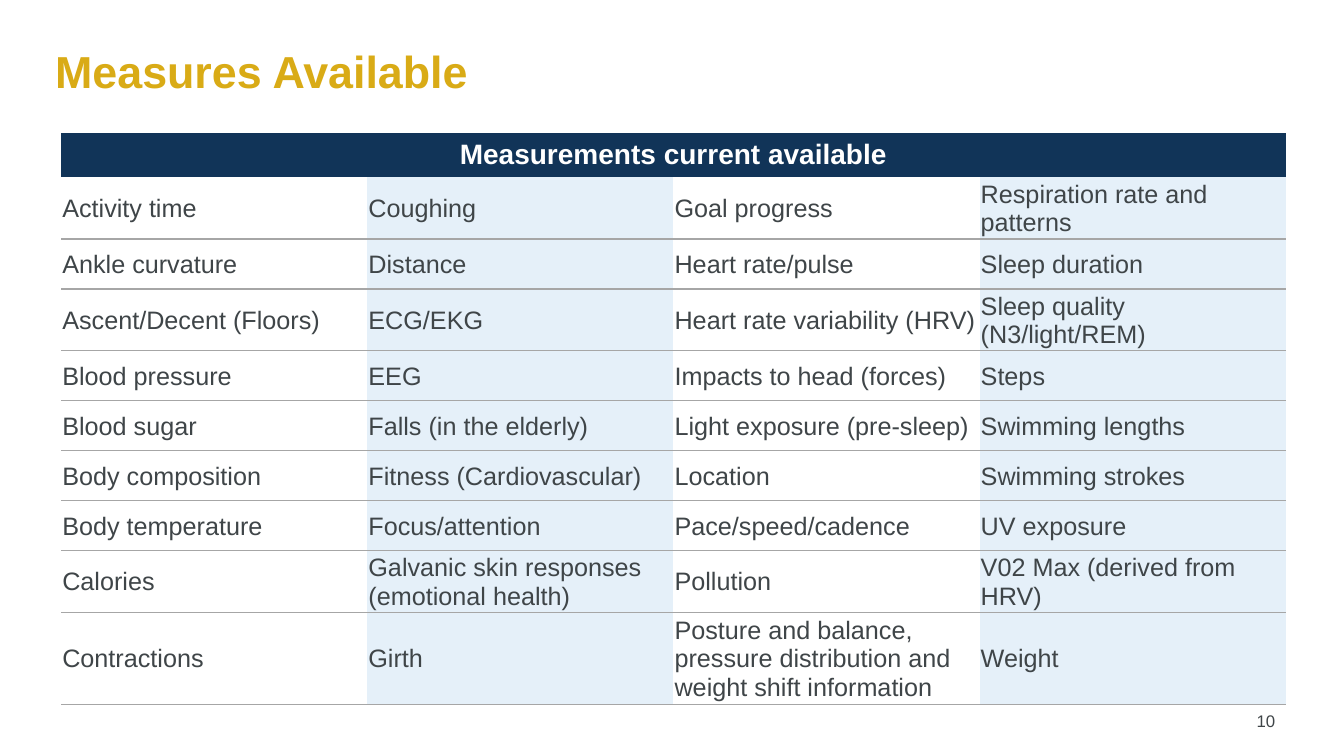
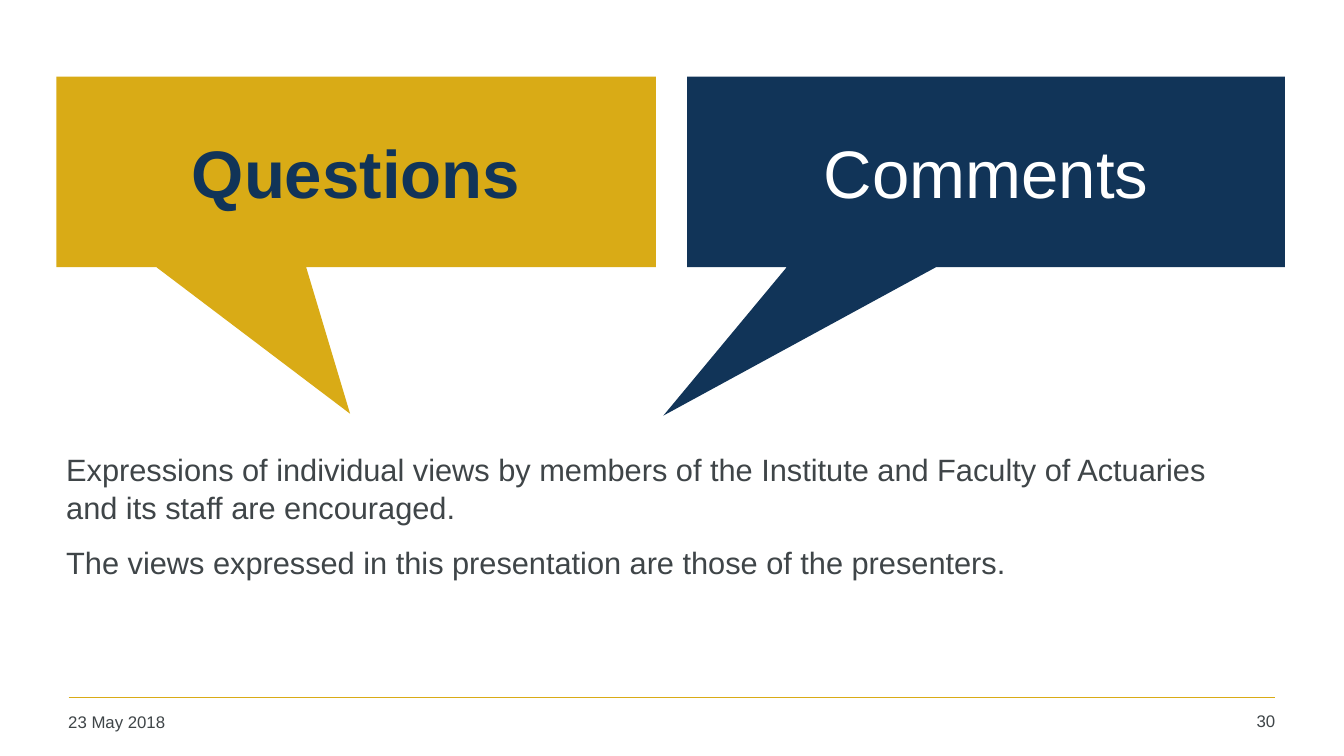
from dataclasses import dataclass

from lxml import etree
from pptx import Presentation
from pptx.dml.color import RGBColor
from pptx.enum import shapes, text
from pptx.oxml.ns import qn
from pptx.util import Cm, Pt


@dataclass(frozen=True)
class Theme:
    font: str = "Arial"
    gold: str = "D9AB16"
    navy: str = "113458"
    ink: str = "3F4548"
    white: str = "FFFFFF"
    pale: str = "E5F0F9"
    rule: str = "A6A6A6"
    title: int = 32
    call: int = 48
    body: int = 22
    head: int = 20
    cell: int = 18
    foot: int = 12


T = Theme()
ALIGN = text.PP_ALIGN
MID = text.MSO_ANCHOR.MIDDLE

HEAD = "Measurements current available"
ROWS = [
    ("Activity time", "Coughing", "Goal progress", "Respiration rate and patterns"),
    ("Ankle curvature", "Distance", "Heart rate/pulse", "Sleep duration"),
    ("Ascent/Decent (Floors)", "ECG/EKG", "Heart rate variability (HRV)",
     "Sleep quality (N3/light/REM)"),
    ("Blood pressure", "EEG", "Impacts to head (forces)", "Steps"),
    ("Blood sugar", "Falls (in the elderly)", "Light exposure (pre-sleep)",
     "Swimming lengths"),
    ("Body composition", "Fitness (Cardiovascular)", "Location", "Swimming strokes"),
    ("Body temperature", "Focus/attention", "Pace/speed/cadence", "UV exposure"),
    ("Calories", "Galvanic skin responses (emotional health)", "Pollution",
     "V02 Max (derived from HRV)"),
    ("Contractions", "Girth",
     "Posture and balance, pressure distribution and weight shift information",
     "Weight"),
]
# Row heights in cm, by the number of text lines in the tallest cell
ONE, TWO, THREE = 1.26, 1.46, 2.19
HIGH = [1.13, TWO, ONE, TWO, ONE, ONE, ONE, ONE, TWO, THREE]

VIEWS = [
    "Expressions of individual views by members of the Institute and Faculty of "
    "Actuaries and its staff are encouraged.",
    "The views expressed in this presentation are those of the presenters.",
]


def rgb(code):
    return RGBColor.from_string(code)


def write(para, words, size, color, bold=False, align=ALIGN.LEFT):
    para.alignment = align
    run = para.add_run()
    run.text = words
    font = run.font
    font.name, font.size, font.bold = T.font, Pt(size), bold
    font.color.rgb = rgb(color)


def add_box(slide, area, lines, size, color, bold=False, align=ALIGN.LEFT,
            anchor=text.MSO_ANCHOR.TOP, gap=0, lead=None):
    """Add a text box; gap is the space between paragraphs in points."""
    frame = slide.shapes.add_textbox(*map(Cm, area)).text_frame
    frame.word_wrap = True
    frame.vertical_anchor = anchor
    for i, words in enumerate(lines):
        para = frame.add_paragraph() if i else frame.paragraphs[0]
        para.space_before = Pt(gap if i else 0)
        para.line_spacing = lead
        write(para, words, size, color, bold, align)


def add_title(slide, words):
    add_box(slide, (1.14, 0.23, 30.7, 3.1), [words], T.title, T.gold, True, anchor=MID)


def add_foot(slide, page, date=None):
    line = slide.shapes.add_connector(
        shapes.MSO_CONNECTOR.STRAIGHT, Cm(1.73), Cm(17.58), Cm(32.13), Cm(17.58))
    line.line.color.rgb = rgb(T.gold)
    line.line.width = Pt(1)
    etree.SubElement(line._element.spPr, qn("a:effectLst"))
    add_box(slide, (30, 17.78, 2.39, 0.94), [page], T.foot, T.ink, align=ALIGN.RIGHT)
    if date:
        add_box(slide, (1.47, 17.8, 7.47, 0.92), [date], T.foot, T.ink)


def add_call(slide, area, tip, words, fill, color, bold=False):
    """Add a speech callout; tip is its point relative to the centre."""
    shape = slide.shapes.add_shape(
        shapes.MSO_SHAPE.RECTANGULAR_CALLOUT, *map(Cm, area))
    shape.shadow.inherit = False
    shape.fill.solid()
    shape.fill.fore_color.rgb = rgb(fill)
    shape.line.fill.background()
    shape.adjustments[0], shape.adjustments[1] = tip
    frame = shape.text_frame
    frame.word_wrap = True
    frame.vertical_anchor = MID
    write(frame.paragraphs[0], words, T.call, color, bold, ALIGN.CENTER)


def set_edges(cell, ruled):
    """Rule the edges named in ruled and clear the others; call before the fill."""
    props = cell._tc.get_or_add_tcPr()
    for side in "LRTB":
        edge = etree.SubElement(props, qn(f"a:ln{side}"), w=str(Pt(1)))
        if side in ruled:
            fill = etree.SubElement(edge, qn("a:solidFill"))
            etree.SubElement(fill, qn("a:srgbClr"), val=T.rule)
        else:
            etree.SubElement(edge, qn("a:noFill"))


def style_cell(cell, fill, ruled=""):
    set_edges(cell, ruled)
    cell.fill.solid()
    cell.fill.fore_color.rgb = rgb(fill)
    cell.vertical_anchor = MID


def add_grid(slide, left, top, width):
    cols = len(ROWS[0])
    grid = slide.shapes.add_table(
        len(HIGH), cols, Cm(left), Cm(top), Cm(width), Cm(sum(HIGH))).table
    grid.first_row = grid.horz_banding = False
    for row, high in zip(grid.rows, HIGH):
        row.height = Cm(high)
    for cell in grid.rows[0].cells:
        style_cell(cell, T.navy)
    head = grid.cell(0, 0)
    head.merge(grid.cell(0, cols - 1))
    write(head.text_frame.paragraphs[0], HEAD, T.head, T.white, True, ALIGN.CENTER)
    for r, names in enumerate(ROWS, 1):
        for c, name in enumerate(names):
            cell = grid.cell(r, c)
            style_cell(cell, T.pale if c % 2 else T.white, "TB" if r > 1 else "B")
            cell.margin_left = cell.margin_right = cell.margin_top = Cm(0.03)
            cell.margin_bottom = 0
            write(cell.text_frame.paragraphs[0], name, T.cell, T.ink)


def main():
    deck = Presentation()
    deck.slide_width, deck.slide_height = Cm(33.87), Cm(19.05)
    blank = deck.slide_layouts[6]

    slide = deck.slides.add_slide(blank)
    add_foot(slide, "10")
    add_grid(slide, 1.54, 3.34, 30.86)
    add_title(slide, "Measures Available")

    slide = deck.slides.add_slide(blank)
    add_foot(slide, "30", "23 May 2018")
    add_box(slide, (1.42, 11.18, 30.53, 6.2), VIEWS, T.body, T.ink, gap=11, lead=1.05)
    add_call(slide, (1.42, 1.93, 15.11, 4.8), (-0.01, 1.27),
             "Questions", T.gold, T.navy, True)
    add_call(slide, (17.32, 1.93, 15.06, 4.8), (-0.54, 1.28),
             "Comments", T.navy, T.white)

    deck.save("out.pptx")


if __name__ == "__main__":
    main()
